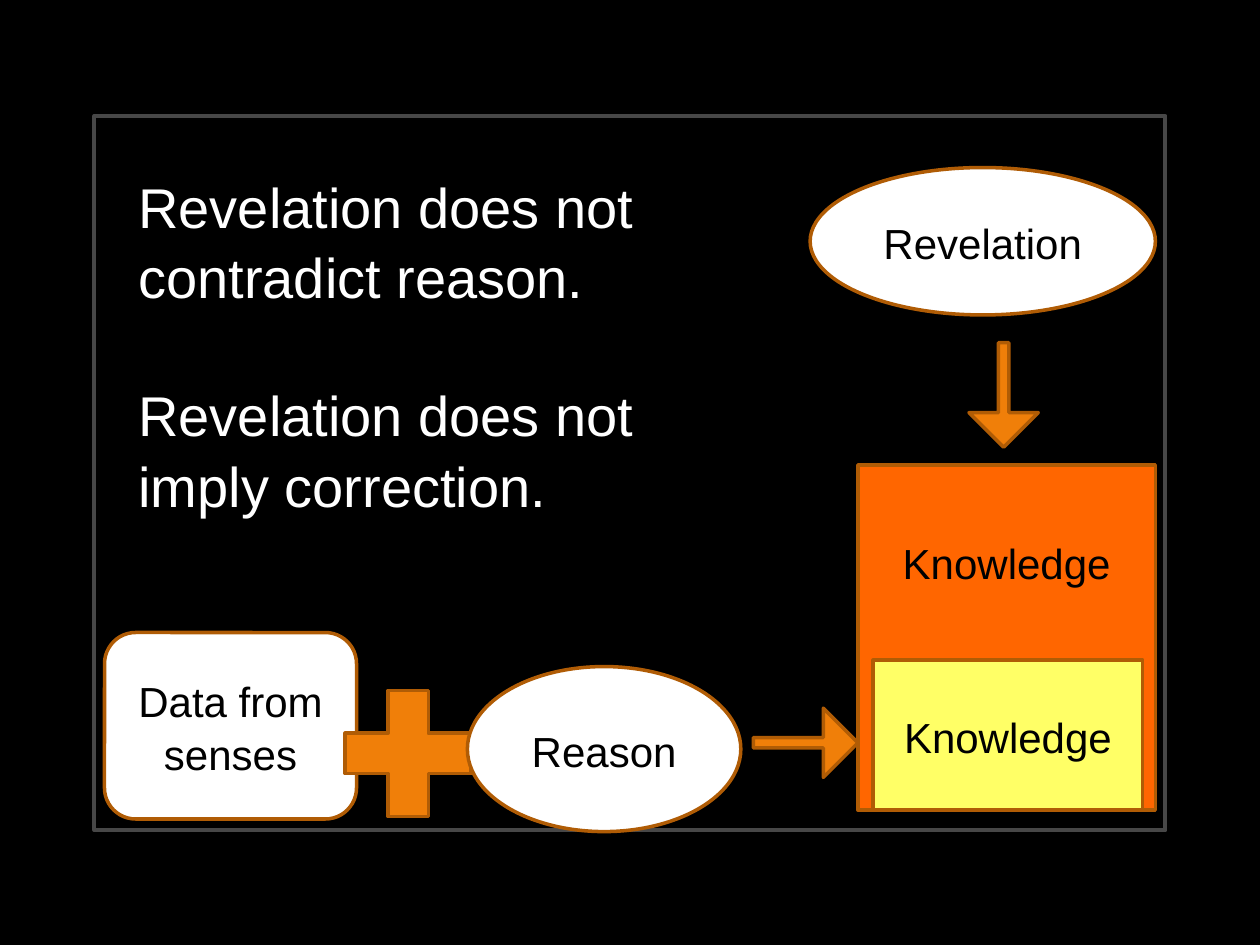
from pptx import Presentation
from pptx.dml.color import RGBColor
from pptx.enum.shapes import MSO_SHAPE
from pptx.enum.text import MSO_ANCHOR, PP_ALIGN
from pptx.util import Inches, Pt

RECTANGLE = MSO_SHAPE.RECTANGLE
ROUNDED = MSO_SHAPE.ROUNDED_RECTANGLE
OVAL = MSO_SHAPE.OVAL
ARROW = MSO_SHAPE.RIGHT_ARROW
MIDDLE = MSO_ANCHOR.MIDDLE
TOP = MSO_ANCHOR.TOP
CENTER = PP_ALIGN.CENTER
LEFT = PP_ALIGN.LEFT

COLORS = {
    "background": "000000",
    "frame": "474747",
    "outline": "B05C05",
    "arrow": "F07F09",
    "white": "FFFFFF",
    "black": "000000",
    "orange": "FF6600",
    "yellow": "FFFF66",
}
COLORS = {name: RGBColor.from_string(value) for name, value in COLORS.items()}

presentation = Presentation()
presentation.slide_width = Inches(10)
presentation.slide_height = Inches(7.5)
COLUMN = presentation.slide_width / 100
ROW = presentation.slide_height / 75
slide = presentation.slides.add_slide(presentation.slide_layouts[6])
slide.background.fill.solid()
slide.background.fill.fore_color.rgb = COLORS["background"]


def paint(shape, fill, line="outline", width=2):
    shape.shadow.inherit = False
    if fill:
        shape.fill.solid()
        shape.fill.fore_color.rgb = COLORS[fill]
    else:
        shape.fill.background()
    shape.line.color.rgb = COLORS[line]
    shape.line.width = Pt(width)


def write(shape, texts, size, color, alignment, anchor, gap=0):
    frame = shape.text_frame
    frame_format = {
        "word_wrap": True,
        "vertical_anchor": anchor,
        "margin_left": Inches(0.1),
        "margin_right": Inches(0.1),
        "margin_top": Inches(0.05),
        "margin_bottom": Inches(0.05),
    }
    for name, value in frame_format.items():
        setattr(frame, name, value)
    for index, text in enumerate(texts):
        paragraph = frame.paragraphs[0] if index == 0 else frame.add_paragraph()
        paragraph.text = text
        paragraph.alignment = alignment
        paragraph.line_spacing = 1.05
        paragraph.space_before = Pt(gap if index else 0)
        for name, value in {"name": "Arial", "size": Pt(size)}.items():
            setattr(paragraph.runs[0].font, name, value)
        paragraph.runs[0].font.color.rgb = COLORS[color]


border = slide.shapes.add_shape(
    RECTANGLE, *(round(n * u) for n, u in zip((7.5, 9.2, 85, 56.7), (COLUMN, ROW) * 2)))
paint(border, None, "frame", 2.25)

boxes = [
    ("Data from senses", ROUNDED, "white", (8.3, 50.2, 20, 14.8)),
    ("plus", None, "arrow", (27.4, 54.8, 10, 10)),
    ("Knowledge", RECTANGLE, "orange", (68.1, 36.9, 23.6, 27.4)),
    ("Reason", OVAL, "white", (37.1, 52.9, 21.7, 13.1)),
    ("Knowledge", RECTANGLE, "yellow", (69.3, 52.4, 21.4, 11.9)),
    ("Revelation", OVAL, "white", (64.3, 13.3, 27.4, 11.7)),
]
for text, kind, fill, place in boxes:
    left, top, width, height = (round(n * u) for n, u in zip(place, (COLUMN, ROW) * 2))
    if kind is None:
        near, far = 0.34, 0.66
        corners = [
            (0, near), (near, near), (near, 0), (far, 0), (far, near), (1, near),
            (1, far), (far, far), (far, 1), (near, 1), (near, far), (0, far),
        ]
        points = [(round(left + x * width), round(top + y * height)) for x, y in corners]
        builder = slide.shapes.build_freeform(*points[0])
        builder.add_line_segments(points[1:], close=True)
        paint(builder.convert_to_shape(), fill)
        continue
    box = slide.shapes.add_shape(kind, left, top, width, height)
    paint(box, fill)
    write(box, [text], 24, "black", CENTER, MIDDLE)
    if fill == "orange":
        box.text_frame.margin_bottom = round(12.5 * ROW)

for left, top, rotation in [(59.8, 56.2, 0), (75.5, 28.6, 90)]:
    arrow = slide.shapes.add_shape(
        ARROW, round(left * COLUMN), round(top * ROW), round(8.3 * COLUMN), round(5.5 * ROW))
    arrow.adjustments[0] = 0.15
    arrow.adjustments[1] = 0.5
    arrow.rotation = rotation
    paint(arrow, "arrow")

statement = slide.shapes.add_textbox(
    round(10 * COLUMN), round(12.9 * ROW), round(52.1 * COLUMN), round(27.9 * ROW))
claims = ["Revelation does not contradict reason.", "Revelation does not imply correction."]
write(statement, claims, 32, "white", LEFT, TOP, gap=38.5)

presentation.save("out.pptx")
